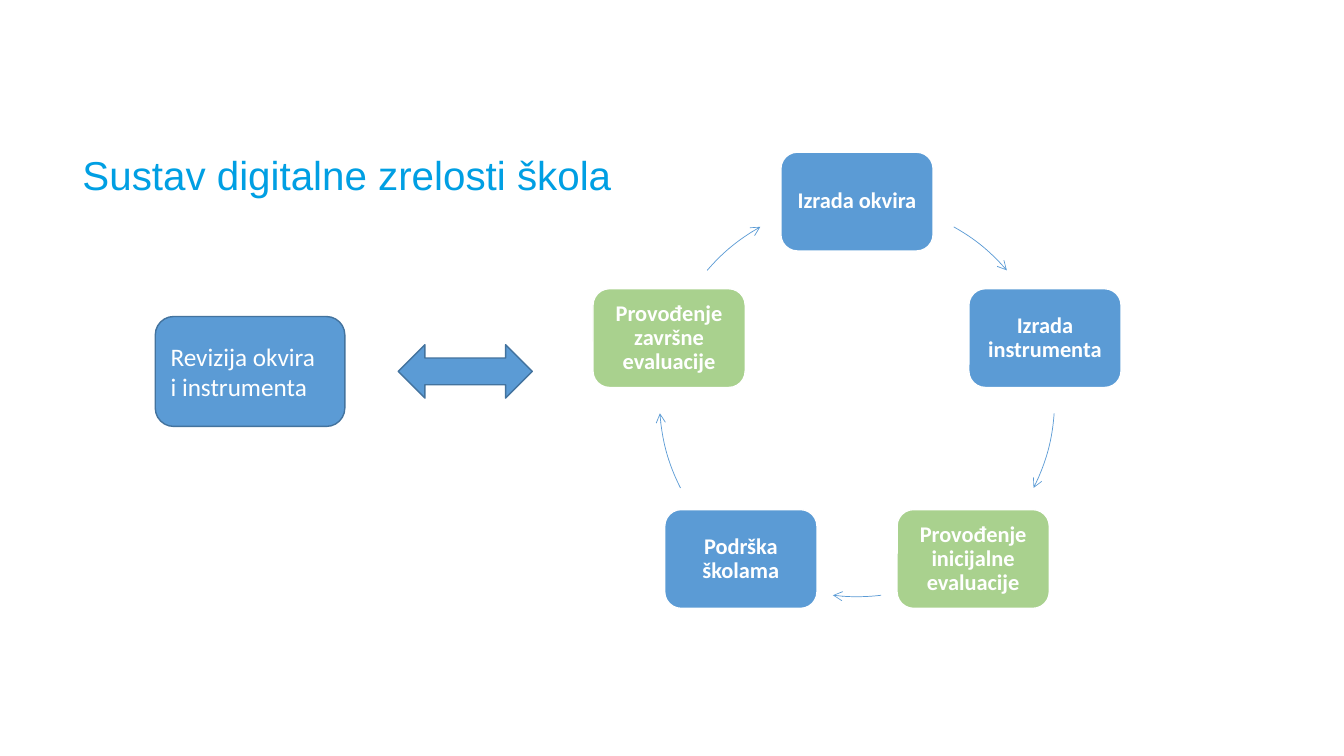
import math

import pptx
import pptx.dml.color
import pptx.enum.shapes
import pptx.enum.text
import pptx.oxml
import pptx.oxml.ns
import pptx.util

Inches = pptx.util.Inches
Pt = pptx.util.Pt
MSO_SHAPE = pptx.enum.shapes.MSO_SHAPE
ALIGN = pptx.enum.text.PP_ALIGN
ANCHOR = pptx.enum.text.MSO_ANCHOR


def rgb(color):
    return pptx.dml.color.RGBColor.from_string(color)


class Deck:
    BLUE = "5B9BD5"
    GREEN = "A9D18E"
    WHITE = "FFFFFF"
    OUTLINE = "43739E"
    TITLE = "009FE3"

    def __init__(self):
        self.prs = pptx.Presentation()
        self.prs.slide_width = Inches(13.33)
        self.prs.slide_height = Inches(7.5)
        self.s = self.prs.slides.add_slide(self.prs.slide_layouts[6])

    def add_text(self, sp, lines, size, font="Calibri", color=WHITE, bold=False,
                 align=ALIGN.LEFT, anchor=ANCHOR.MIDDLE, spacing=None):
        tf = sp.text_frame
        tf.word_wrap = True
        tf.vertical_anchor = anchor
        p = tf.paragraphs[0]
        p.alignment = align
        p.line_spacing = spacing
        for i, line in enumerate(lines):
            if i:
                p.add_line_break()
            r = p.add_run()
            r.text = line
            r.font.name = font
            r.font.size = Pt(size)
            r.font.bold = bold
            r.font.color.rgb = rgb(color)
        return tf

    def title(self, text, x, y, w, h):
        sp = self.s.shapes.add_textbox(Inches(x), Inches(y), Inches(w), Inches(h))
        self.add_text(sp, [text], 28.8, "Arial", self.TITLE, anchor=ANCHOR.BOTTOM, spacing=0.9)

    def shape(self, kind, x, y, w, h, fill, line, width=1):
        sp = self.s.shapes.add_shape(kind, Inches(x), Inches(y), Inches(w), Inches(h))
        sp.shadow.inherit = False
        if fill:
            sp.fill.solid()
            sp.fill.fore_color.rgb = rgb(fill)
        else:
            sp.fill.background()
        sp.line.color.rgb = rgb(line)
        sp.line.width = Pt(width)
        return sp

    def stage(self, text, cx, cy, fill):
        w, h = 1.51, 0.98
        sp = self.shape(MSO_SHAPE.ROUNDED_RECTANGLE, cx - w / 2, cy - h / 2, w, h,
                        fill, self.WHITE)
        tf = self.add_text(sp, [text], 16, bold=True, align=ALIGN.CENTER, spacing=0.9)
        tf.margin_left = tf.margin_right = Inches(0.07)
        tf.margin_top = tf.margin_bottom = Inches(0.07)

    def arc_arrow(self, cx, cy, radius, start, end):
        sp = self.shape(MSO_SHAPE.ARC, cx - radius, cy - radius, 2 * radius, 2 * radius,
                        None, self.BLUE, 0.5)
        sp.adjustments[0] = start * 0.6
        sp.adjustments[1] = end * 0.6
        ln = sp.element.spPr.find(pptx.oxml.ns.qn("a:ln"))
        ln.append(pptx.oxml.parse_xml(
            '<a:tailEnd %s type="arrow"/>' % pptx.oxml.ns.nsdecls("a")))

    def cycle(self, cx, cy, radius, stages, arcs):
        for i, ((text, fill), (start, end)) in enumerate(zip(stages, arcs)):
            angle = math.radians(360 * i / len(stages) - 90)
            self.stage(text, cx + radius * math.cos(angle), cy + radius * math.sin(angle), fill)
            self.arc_arrow(cx, cy, radius, start, end)


def main():
    d = Deck()
    d.title("Sustav digitalne zrelosti škola", 0.72, 1.45, 11.5, 0.58)
    stages = [
        ("Izrada okvira", d.BLUE),
        ("Izrada instrumenta", d.BLUE),
        ("Provođenje inicijalne evaluacije", d.GREEN),
        ("Podrška školama", d.BLUE),
        ("Provođenje završne evaluacije", d.GREEN),
    ]
    arcs = [(299.3, 319.3), (4.1, 26.7), (83, 97), (153.3, 175.9), (220.7, 240.7)]
    d.cycle(8.5, 3.96, 1.96, stages, arcs)
    revision = d.shape(MSO_SHAPE.ROUNDED_RECTANGLE, 1.54, 3.14, 1.88, 1.09, d.BLUE, d.OUTLINE)
    d.add_text(revision, ["Revizija okvira", "i instrumenta"], 18)
    d.shape(MSO_SHAPE.LEFT_RIGHT_ARROW, 3.95, 3.42, 1.33, 0.53, d.BLUE, d.OUTLINE)
    d.prs.save("out.pptx")


if __name__ == "__main__":
    main()
